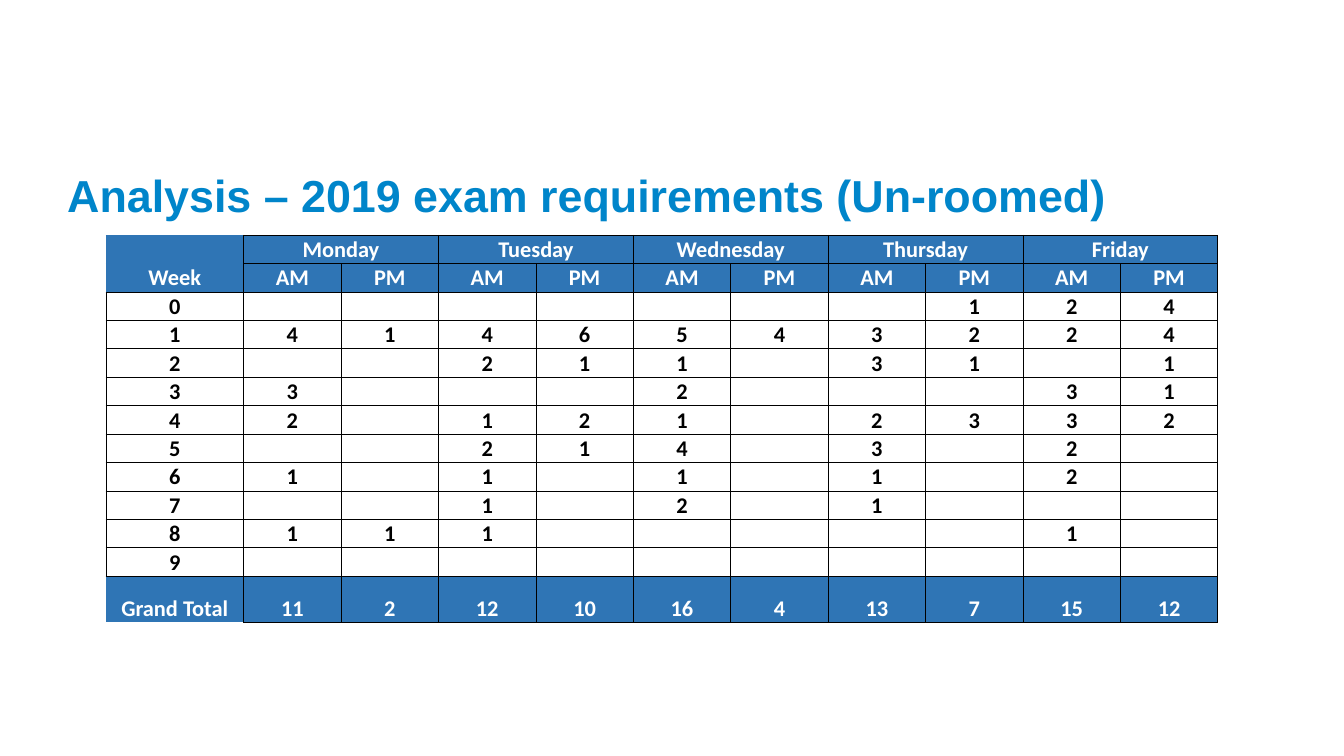
from lxml.etree import SubElement
from pptx import Presentation
from pptx.dml.color import RGBColor
from pptx.enum.text import MSO_ANCHOR as Anchor, MSO_AUTO_SIZE as AutoSize, PP_ALIGN as Align
from pptx.oxml.ns import qn
from pptx.util import Inches, Pt

DAYS = ["Monday", "Tuesday", "Wednesday", "Thursday", "Friday"]
# One row per week, AM and PM for each day; 0 means no exams
EXAMS = [
    [0, 0, 0, 0, 0, 0, 0, 1, 2, 4],
    [4, 1, 4, 6, 5, 4, 3, 2, 2, 4],
    [0, 0, 2, 1, 1, 0, 3, 1, 0, 1],
    [3, 0, 0, 0, 2, 0, 0, 0, 3, 1],
    [2, 0, 1, 2, 1, 0, 2, 3, 3, 2],
    [0, 0, 2, 1, 4, 0, 3, 0, 2, 0],
    [1, 0, 1, 0, 1, 0, 1, 0, 2, 0],
    [0, 0, 1, 0, 2, 0, 1, 0, 0, 0],
    [1, 1, 1, 0, 0, 0, 0, 0, 1, 0],
    [0, 0, 0, 0, 0, 0, 0, 0, 0, 0],
]


def color(hex_value):
    return RGBColor.from_string(hex_value)


class ExamSlide:
    """Holds the style and the slide; lengths are percentages of the slide."""
    TITLE_BLUE, BAND_BLUE = "0085CA", "2F75B5"
    BLACK, WHITE = "000000", "FFFFFF"

    def __init__(self, deck):
        self.deck = deck
        self.slide = deck.slides.add_slide(deck.slide_layouts[5])

    def across(self, percent):
        return round(self.deck.slide_width * percent / 100)

    def down(self, percent):
        return round(self.deck.slide_height * percent / 100)

    def style(self, paragraph, font_name, size, hex_value, align):
        paragraph.alignment = align
        for run in paragraph.runs:
            run.font.name, run.font.size, run.font.bold = font_name, Pt(size), True
            run.font.color.rgb = color(hex_value)

    def title(self, wording, left, top, width, height):
        heading = self.slide.shapes.title
        heading.left, heading.top = self.across(left), self.down(top)
        heading.width, heading.height = self.across(width), self.down(height)
        frame = heading.text_frame
        frame.text = wording
        frame.word_wrap, frame.auto_size = True, AutoSize.NONE
        frame.vertical_anchor = Anchor.MIDDLE
        frame.margin_left = frame.margin_right = frame.margin_bottom = 0
        frame.margin_top = Inches(0.05)
        self.style(frame.paragraphs[0], "Arial", 32, self.TITLE_BLUE, Align.LEFT)

    def border(self, cell, sides):
        """Draws the sides L, R, T and B; a side without a colour stays clear."""
        properties = cell._tc.get_or_add_tcPr()
        for side in "LRTB":
            line = SubElement(properties, qn("a:ln" + side), w=str(Pt(0.5)))
            if sides.get(side):
                fill = SubElement(line, qn("a:solidFill"))
                SubElement(fill, qn("a:srgbClr"), val=sides[side])
            else:
                SubElement(line, qn("a:noFill"))

    def cell(self, cell, wording, banded, sides):
        self.border(cell, sides)
        if banded:
            cell.fill.solid()
            cell.fill.fore_color.rgb = color(self.BAND_BLUE)
        else:
            cell.fill.background()
        cell.vertical_anchor = Anchor.BOTTOM
        cell.margin_left = cell.margin_right = cell.margin_top = Inches(0.01)
        cell.margin_bottom = 0
        paragraph = cell.text_frame.paragraphs[0]
        paragraph.text = wording
        self.style(paragraph, "Calibri", 16, self.WHITE if banded else self.BLACK,
                   Align.CENTER)
        if not wording:  # keeps empty cells as low as the others
            SubElement(paragraph._p, qn("a:endParaRPr"), sz="1600")

    def sides(self, row, column, last_row):
        lines = dict.fromkeys("LRTB", self.BLACK)
        if column == 0 and row in (0, 1, last_row):
            lines["L"] = None
            if row < 2:
                lines["T"] = self.BAND_BLUE
            if row == 0:
                lines["B"] = self.BAND_BLUE
            if row == last_row:
                lines["B"] = None
        return lines

    def timetable(self, rows, left, top, week_width, half_day_width, row_height, total_height):
        columns, last_row = len(rows[0]), len(rows) - 1
        table = self.slide.shapes.add_table(
            len(rows), columns, self.across(left), self.down(top),
            self.across(week_width + half_day_width * (columns - 1)),
            self.down(row_height * last_row + total_height)).table
        table.first_row = table.horz_banding = False
        for index, column in enumerate(table.columns):
            column.width = self.across(half_day_width if index else week_width)
        for index, row in enumerate(table.rows):
            row.height = self.down(total_height if index == last_row else row_height)
        for row, entries in enumerate(rows):
            for column, wording in enumerate(entries):
                self.cell(table.cell(row, column), wording, row in (0, 1, last_row),
                          self.sides(row, column, last_row))
        # Each day heading spans its AM and PM columns
        for column in range(1, columns, 2):
            table.cell(0, column).merge(table.cell(0, column + 1))


def main():
    deck = Presentation()
    deck.slide_width, deck.slide_height = Inches(13.33), Inches(7.5)
    page = ExamSlide(deck)

    # Heading
    page.title("Analysis – 2019 exam requirements (Un-roomed)", 5, 21.7, 90, 7.5)

    # Exams by week and half day, with column totals
    day_row = [""] + [label for day in DAYS for label in (day, "")]
    half_day_row = ["Week"] + ["AM", "PM"] * len(DAYS)
    week_rows = [[str(week)] + [str(count or "") for count in counts]
                 for week, counts in enumerate(EXAMS)]
    total_row = ["Grand Total"] + [str(sum(counts)) for counts in zip(*EXAMS)]
    page.timetable([day_row, half_day_row, *week_rows, total_row],
                   left=7.88, top=31.1, week_width=10.25, half_day_width=7.25,
                   row_height=3.6, total_height=6.13)

    deck.save("out.pptx")


if __name__ == "__main__":
    main()
